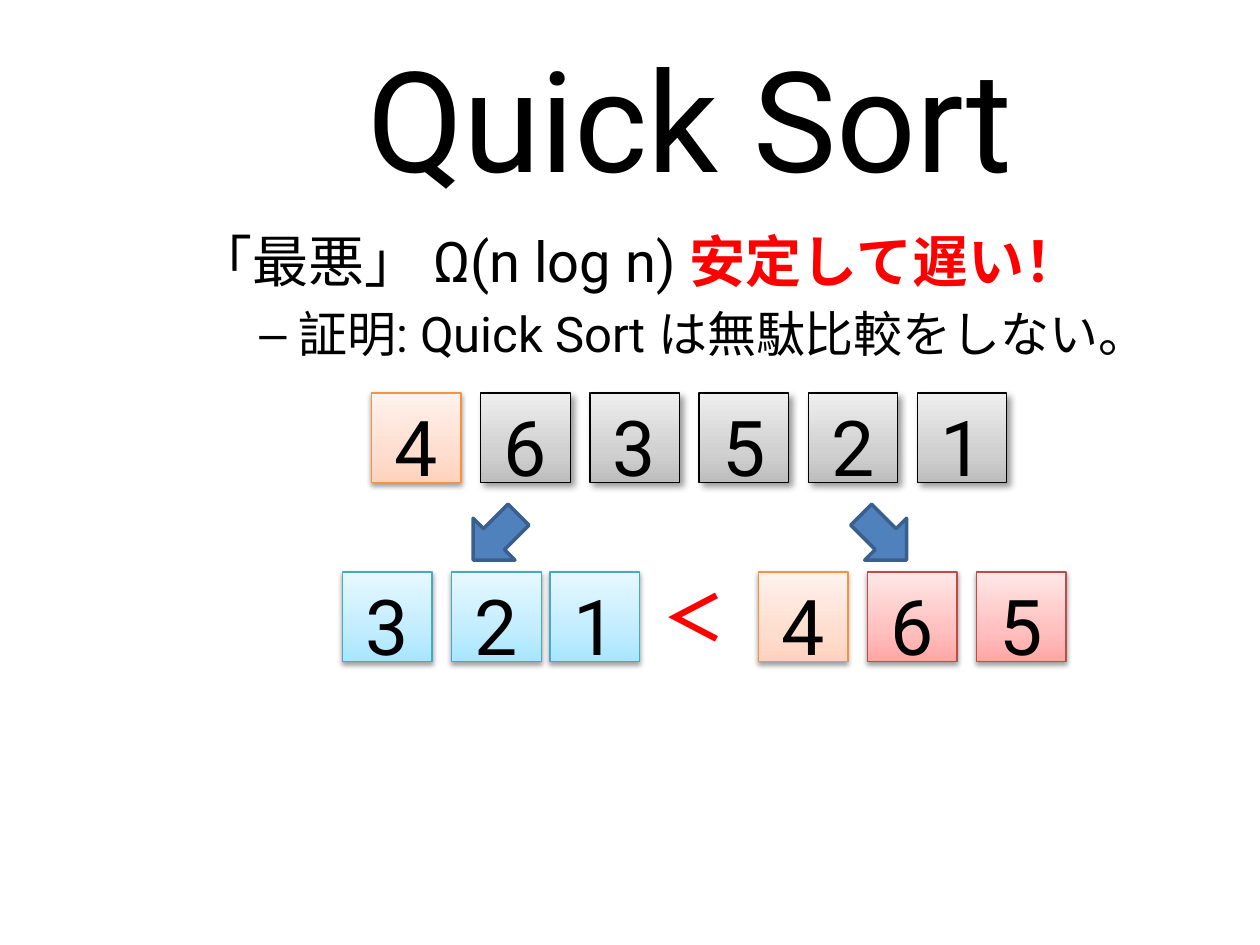
from dataclasses import dataclass

from lxml.etree import SubElement
from pptx import Presentation
from pptx.dml.color import RGBColor
from pptx.enum.shapes import MSO_SHAPE as Shape
from pptx.enum.text import MSO_ANCHOR as Anchor, PP_ALIGN as Align
from pptx.oxml.ns import qn
from pptx.util import Inches, Pt

COLORS = {
    "text": "000000",
    "accent": "FF0000",
    "arrow": "4F81BD",
    "arrow_line": "3A5F8C",
}
FONT = "Roboto"
TILE = 0.71
PITCH = (7.28 - 2.95) / 5
TOP_ROW, ARROW_ROW, BOTTOM_ROW = 3.12, 4.01, 4.54
CONTENT_LEFT, CONTENT_WIDTH = 1.46, 8.04


@dataclass(frozen=True)
class Shadow:
    alpha: int
    blur: float
    dist: float
    angle: int


@dataclass(frozen=True)
class TileStyle:
    stops: tuple[str, str, str]
    line: str
    shadow: Shadow


@dataclass(frozen=True)
class Group:
    """Tiles in one row, each placed at a column counted from the left."""
    left: float
    top: float
    tiles: tuple[tuple[float, str, TileStyle], ...]


SOFT = Shadow(38, 3.1, 1.6, 90)
GRAY = TileStyle(("BDBDBD", "D1D1D1", "EEEEEE"), "000000", Shadow(40, 4, 3, 45))
PIVOT = TileStyle(("FFD2BD", "FFDED0", "FFF2ED"), "F69240", SOFT)
SMALL = TileStyle(("A7E6FF", "C1EDFF", "E7F8FF"), "46AAC5", SOFT)
LARGE = TileStyle(("FFA6A5", "FFC0BF", "FFE7E7"), "BF4C48", SOFT)

GROUPS = (
    Group(2.95, TOP_ROW, ((0, "4", PIVOT),
                          *((i, d, GRAY) for i, d in enumerate("63521", 1)))),
    Group(2.72, BOTTOM_ROW, ((0, "3", SMALL), (1, "2", SMALL), (1.9, "1", SMALL))),
    Group(6.02, BOTTOM_ROW, ((0, "4", PIVOT), (1, "6", LARGE), (2, "5", LARGE))),
)


def rgb(value: str) -> RGBColor:
    return RGBColor.from_string(value)


def inches(*values: float) -> list[int]:
    return [Inches(v) for v in values]


def style_font(r, size: float, color: str = "text", bold: bool = False,
               name: str = FONT) -> None:
    r.font.name, r.font.size, r.font.bold = name, Pt(size), bold
    r.font.color.rgb = rgb(COLORS[color])


def add_color(parent, value: str):
    return SubElement(parent, qn("a:srgbClr"), val=value)


def set_gradient(sp, stops: tuple[str, ...]) -> None:
    """Fill with three stops running from bottom to top."""
    sp.fill.gradient()
    sp.fill.gradient_angle = 90
    gs_list = sp._element.spPr.find(".//" + qn("a:gsLst"))
    for gs in list(gs_list):
        gs_list.remove(gs)
    for share, color in zip((0, 35, 100), stops):
        add_color(SubElement(gs_list, qn("a:gs"), pos=str(share * 1000)), color)


def set_shadow(sp, shadow: Shadow) -> None:
    sp.shadow.inherit = False
    effects = sp._element.spPr.find(qn("a:effectLst"))
    outer = SubElement(effects, qn("a:outerShdw"), blurRad=str(Pt(shadow.blur)),
                       dist=str(Pt(shadow.dist)), dir=str(shadow.angle * 60000),
                       rotWithShape="0")
    SubElement(add_color(outer, "000000"), qn("a:alpha"), val=str(shadow.alpha * 1000))


def add_tile(s, left: float, top: float, digit: str, style: TileStyle) -> None:
    sp = s.shapes.add_shape(Shape.RECTANGLE, *inches(left, top, TILE, TILE))
    set_gradient(sp, style.stops)
    sp.line.color.rgb, sp.line.width = rgb(style.line), Pt(0.75)
    set_shadow(sp, style.shadow)
    tf = sp.text_frame
    tf.text = digit
    tf.word_wrap, tf.vertical_anchor, tf.margin_bottom = False, Anchor.TOP, 0
    p = tf.paragraphs[0]
    p.alignment = Align.CENTER
    style_font(p.runs[0], 44)


def add_arrow(s, left: float, rotation: int) -> None:
    sp = s.shapes.add_shape(Shape.DOWN_ARROW, *inches(left, ARROW_ROW, 0.47, 0.51))
    sp.rotation = rotation
    sp.shadow.inherit = False
    sp.fill.solid()
    sp.fill.fore_color.rgb = rgb(COLORS["arrow"])
    sp.line.color.rgb, sp.line.width = rgb(COLORS["arrow_line"]), Pt(2)


def add_title(s) -> None:
    title = s.shapes.title
    title.left, title.top, title.width, title.height = inches(
        CONTENT_LEFT, 0.3, CONTENT_WIDTH, 1.25)
    tf = title.text_frame
    tf.text = "Quick Sort"
    tf.vertical_anchor = Anchor.MIDDLE
    p = tf.paragraphs[0]
    p.alignment = Align.CENTER
    style_font(p.runs[0], 80)


def add_claim(s) -> None:
    tf = s.shapes.add_textbox(*inches(CONTENT_LEFT, 1.75, CONTENT_WIDTH, 4.95)).text_frame
    tf.word_wrap = True
    p = tf.paragraphs[0]
    p.text = "「最悪」 Ω(n log n) "
    style_font(p.runs[0], 32)
    r = p.add_run()
    r.text = "安定して遅い！"
    style_font(r, 32, "accent", bold=True)

    p = tf.add_paragraph()
    p.text = "証明: Quick Sort は無駄比較をしない。"
    p.level = 1
    p.space_before = Pt(0.2 * 28)
    pPr = p._p.get_or_add_pPr()
    pPr.set("marL", str(Inches(0.81)))
    pPr.set("indent", str(Inches(-0.31)))
    SubElement(pPr, qn("a:buFont"), typeface="Arial")
    SubElement(pPr, qn("a:buChar"), char="–")
    style_font(p.runs[0], 28)


def add_less_than(s) -> None:
    tf = s.shapes.add_textbox(*inches(5.16, BOTTOM_ROW, 0.63, TILE)).text_frame
    tf.word_wrap = True
    tf.text = "＜"
    style_font(tf.paragraphs[0].runs[0], 36, "accent", bold=True, name="Arial")


def main() -> None:
    prs = Presentation()
    prs.slide_width, prs.slide_height = inches(10, 7.5)
    s = prs.slides.add_slide(prs.slide_layouts[5])
    add_title(s)
    add_claim(s)
    for group in GROUPS:
        for column, digit, style in group.tiles:
            add_tile(s, group.left + column * PITCH, group.top, digit, style)
    add_less_than(s)
    add_arrow(s, 3.7, 45)
    add_arrow(s, 6.78, 315)
    prs.save("out.pptx")


if __name__ == "__main__":
    main()
